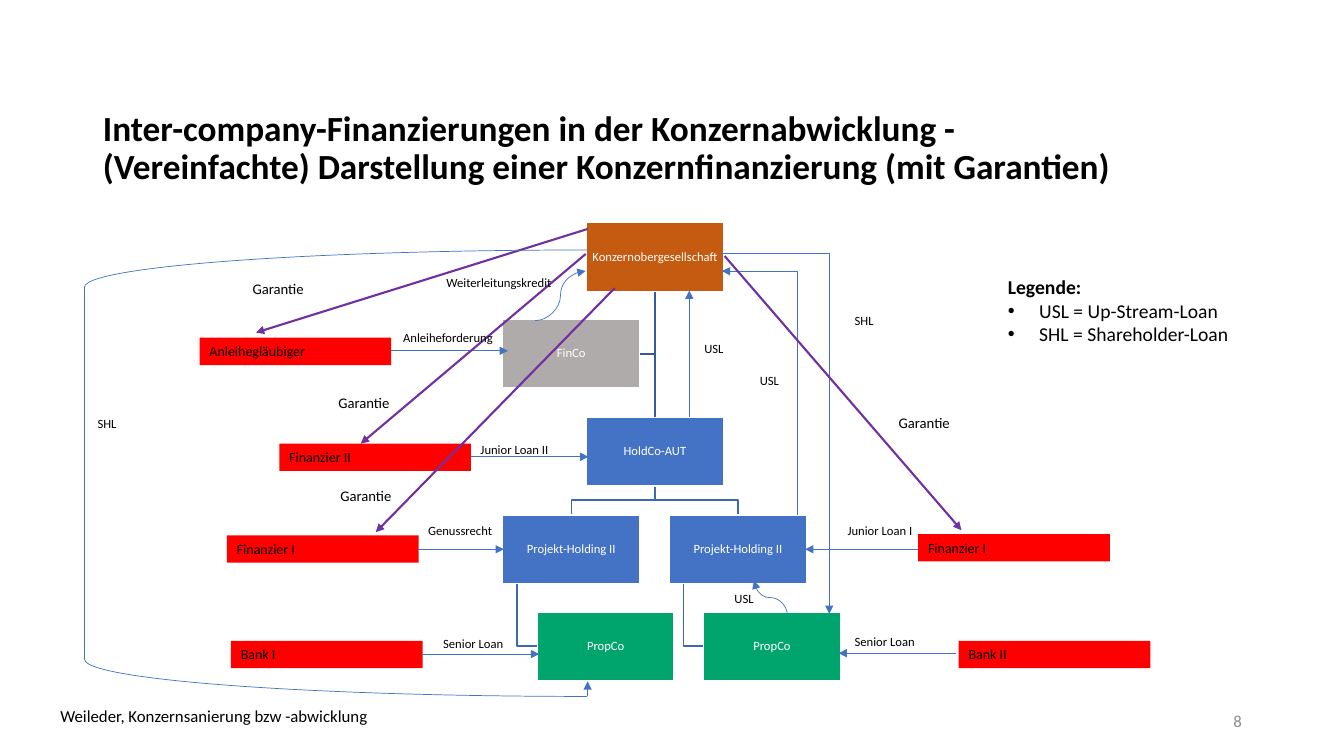
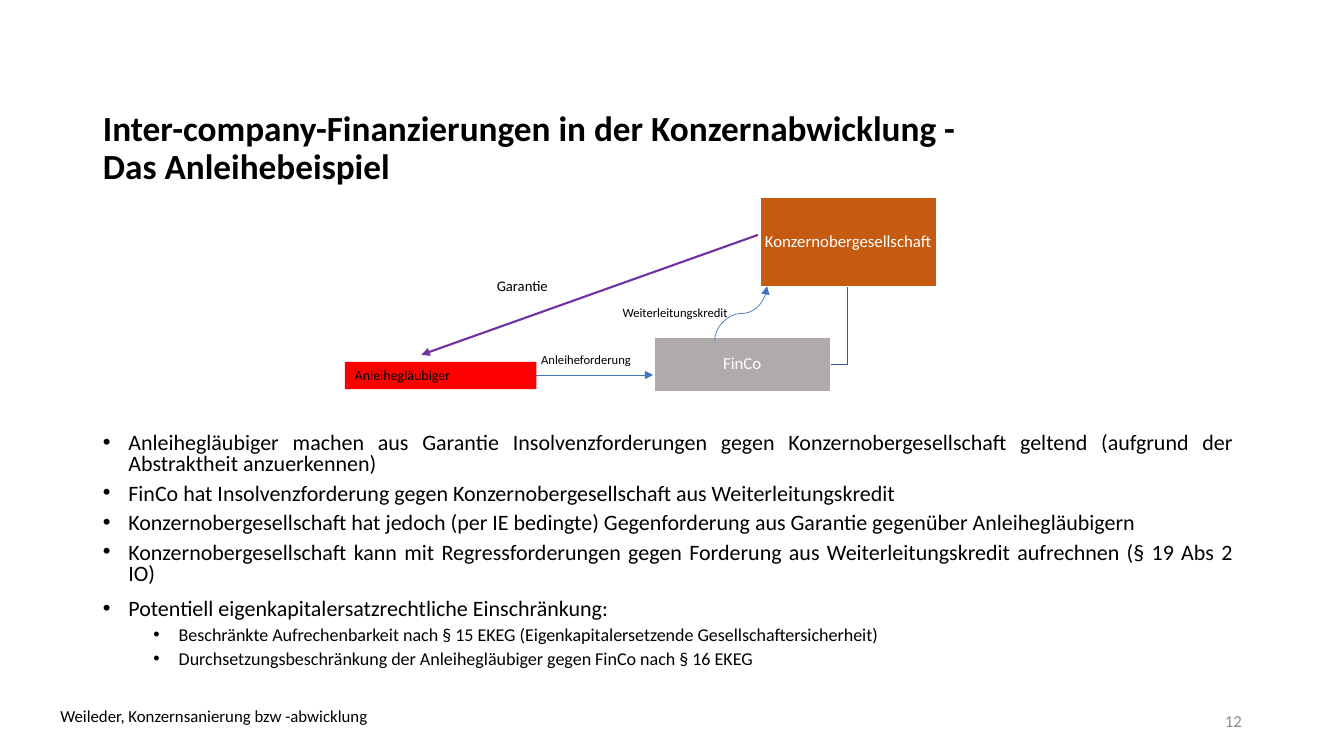
from dataclasses import dataclass

from lxml import etree
from pptx import Presentation
from pptx.dml.color import RGBColor
from pptx.enum.shapes import MSO_CONNECTOR as Link, MSO_SHAPE as Preset
from pptx.enum.text import MSO_ANCHOR as Anchor, MSO_AUTO_SIZE as AutoSize, PP_ALIGN as Align
from pptx.oxml.ns import qn
from pptx.util import Cm, Pt


@dataclass(frozen=True)
class Theme:
    font: str = "Calibri"
    black: str = "000000"
    white: str = "FFFFFF"
    number: str = "8C8C8C"
    parent: str = "C55A11"
    holding: str = "4472C4"
    property: str = "00A56D"
    finance: str = "AFABAB"
    creditor: str = "FF0000"
    guarantee: str = "7030A0"
    upper_tie: str = "365B9D"
    lower_tie: str = "3E67B2"
    title_size: float = 25.2
    body_size: float = 15.7
    sub_size: float = 12.9
    legend_size: float = 14
    footer_size: float = 12
    guarantee_size: float = 10.5
    creditor_size: float = 10
    label_size: float = 9


theme = Theme()


def add_box(slide, place, text, size, color=theme.black, fill=None, align=Align.LEFT, wrap=True):
    """Add a filled rectangle, or a plain text box when there is no fill."""
    place = [Cm(length) for length in place]
    if fill:
        box = slide.shapes.add_shape(Preset.RECTANGLE, *place)
        box.shadow.inherit = False
        box.fill.solid()
        box.fill.fore_color.rgb = RGBColor.from_string(fill)
        box.line.fill.background()
    else:
        box = slide.shapes.add_textbox(*place)
    frame = box.text_frame
    frame.word_wrap = wrap
    frame.vertical_anchor = Anchor.TOP
    frame.text = text
    for para in frame.paragraphs:
        para.alignment = align
        para.font.name = theme.font
        para.font.size = Pt(size)
        para.font.color.rgb = RGBColor.from_string(color)
    return box


def add_link(slide, start, end, kind=Link.STRAIGHT, color=theme.holding, width=0.5,
             arrow=True, upright=False, bend=None):
    """Add a connector; an upright one leaves its start vertically."""
    (x1, y1), (x2, y2) = start, end
    if upright:
        mid_x, mid_y = (x1 + x2) / 2, (y1 + y2) / 2
        x1, y1, x2, y2 = (mid_x - y1 + mid_y, mid_y + x1 - mid_x,
                          mid_x - y2 + mid_y, mid_y + x2 - mid_x)
    link = slide.shapes.add_connector(kind, Cm(x1), Cm(y1), Cm(x2), Cm(y2))
    if upright:
        link.rotation = 270
    link.line.color.rgb = RGBColor.from_string(color)
    link.line.width = Pt(width)
    properties = link.element.spPr
    if arrow:
        etree.SubElement(properties.find(qn("a:ln")), qn("a:tailEnd"), type="triangle")
    if bend is not None:
        geometry = properties.find(qn("a:prstGeom"))
        guides = geometry.find(qn("a:avLst"))
        if guides is None:
            guides = etree.SubElement(geometry, qn("a:avLst"))
        etree.SubElement(guides, qn("a:gd"), name="adj1", fmla=f"val {bend}")
    etree.SubElement(properties, qn("a:effectLst"))


# Content, lengths in centimetres
label_widths = {
    "Weiterleitungskredit": 3.23, "Anleiheforderung": 2.82, "Senior Loan": 2.03,
    "Junior Loan II": 2.24, "Junior Loan I": 2.16, "Genussrecht": 2.21,
    "USL": 1, "SHL": 1, "Garantie": 1.91,
}
creditor_width, creditor_height = 4.83, 0.69

group_chart = dict(
    number="8",
    layout=5,
    subtitle="(Vereinfachte) Darstellung einer Konzernfinanzierung (mit Garantien)",
    company_size=9,
    ties=[
        (theme.upper_tie, [(16.51, 7.34), (16.51, 8.92), (16.13, 8.92)]),
        (theme.lower_tie, [(16.51, 12.24), (16.51, 12.6), (14.4, 12.6), (14.4, 12.98)]),
        (theme.lower_tie, [(16.51, 12.24), (16.51, 12.6), (18.6, 12.6), (18.6, 12.98)]),
        (theme.lower_tie, [(13.03, 14.71), (13.03, 16.28), (13.54, 16.28)]),
        (theme.lower_tie, [(17.22, 14.71), (17.22, 16.28), (17.73, 16.28)]),
    ],
    companies=[(name, color, (left, top, 3.45, 1.73)) for name, color, left, top in [
        ("Konzernobergesellschaft", theme.parent, 14.78, 5.61),
        ("FinCo", theme.finance, 12.67, 8.05),
        ("HoldCo-AUT", theme.holding, 14.78, 10.52),
        ("Projekt-Holding II", theme.holding, 12.67, 12.98),
        ("Projekt-Holding II", theme.holding, 16.87, 12.98),
        ("PropCo", theme.property, 13.54, 15.42),
        ("PropCo", theme.property, 17.73, 15.42),
    ]],
    creditors=[
        ("Anleihegläubiger", 5.03, 8.51), ("Finanzier II", 7.04, 11.18),
        ("Finanzier I", 5.72, 13.49), ("Finanzier I", 23.14, 13.46),
        ("Bank I", 5.82, 16.15), ("Bank II", 24.16, 16.15),
    ],
    loans=[
        ((9.86, 8.84), (12.8, 8.84)), ((11.86, 11.51), (14.83, 11.51)),
        ((10.54, 13.84), (12.7, 13.84)), ((23.14, 13.84), (20.29, 13.84)),
        ((10.64, 16.48), (13.59, 16.48)), ((24.1, 16.46), (21.13, 16.46)),
        ((17.37, 10.52), (17.37, 7.32)), ((14.81, 17.55), (14.81, 17.17)),
    ],
    bends=[
        ((13.49, 8.08), (14.76, 6.83), Link.CURVE, False, None),
        ((19.84, 15.49), (19, 14.63), Link.CURVE, True, None),
        ((18.19, 6.4), (20.9, 15.47), Link.ELBOW, True, -200),
        ((20.09, 12.98), (18.19, 6.83), Link.ELBOW, True, 99900),
    ],
    guarantees=[
        ((14.81, 5.77), (6.45, 8.38)), ((14.76, 6.4), (9.09, 11.18)),
        ((15.49, 7.26), (9.47, 13.41)), ((18.26, 6.45), (24.23, 13.36)),
    ],
    labels=[
        ("Weiterleitungskredit", 11, 6.81), ("Anleiheforderung", 9.91, 8.18),
        ("Junior Loan II", 11.86, 11), ("Genussrecht", 10.54, 13.06),
        ("Junior Loan I", 21.11, 13.06), ("Senior Loan", 10.92, 15.9),
        ("Senior Loan", 21.29, 15.85), ("USL", 17.5, 8.46), ("USL", 18.9, 9.27),
        ("USL", 18.26, 14.76), ("SHL", 21.29, 7.75), ("SHL", 2.21, 10.36),
        ("Garantie", 6.12, 6.93), ("Garantie", 8.28, 9.8),
        ("Garantie", 8.33, 12.14), ("Garantie", 22.4, 10.31),
    ],
)

bond_chart = dict(
    number="12",
    layout=1,
    subtitle="Das Anleihebeispiel",
    company_size=12,
    ties=[(theme.upper_tie, [(21.36, 7.19), (21.36, 9.19), (20.93, 9.19)])],
    companies=[
        ("Konzernobergesellschaft", theme.parent, (19.15, 4.98, 4.45, 2.24)),
        ("FinCo", theme.finance, (16.48, 8.51, 4.45, 1.35)),
    ],
    creditors=[("Anleihegläubiger", 8.69, 9.12)],
    loans=[((13.51, 9.45), (16.46, 9.45))],
    bends=[((18.01, 8.59), (19.33, 7.21), Link.CURVE, True, None)],
    guarantees=[((19.1, 5.92), (10.62, 8.94))],
    labels=[
        ("Weiterleitungskredit", 15.44, 7.57), ("Anleiheforderung", 13.39, 8.74),
        ("Garantie", 12.27, 6.86),
    ],
)

# Body points: text, level, space before
points = [
    ("Anleihegläubiger machen aus Garantie Insolvenzforderungen gegen Konzernobergesellschaft "
     "geltend (aufgrund der Abstraktheit anzuerkennen)", 0, 0),
    ("FinCo hat Insolvenzforderung gegen Konzernobergesellschaft aus Weiterleitungskredit", 0, 6),
    ("Konzernobergesellschaft hat jedoch (per IE bedingte) Gegenforderung aus Garantie "
     "gegenüber Anleihegläubigern", 0, 6),
    ("Konzernobergesellschaft kann mit Regressforderungen gegen Forderung aus "
     "Weiterleitungskredit aufrechnen (§ 19 Abs 2 IO)", 0, 6),
    ("Potentiell eigenkapitalersatzrechtliche Einschränkung:", 0, 10),
    ("Beschränkte Aufrechenbarkeit nach § 15 EKEG "
     "(Eigenkapitalersetzende Gesellschaftersicherheit)", 1, 5),
    ("Durchsetzungsbeschränkung der Anleihegläubiger gegen FinCo nach § 16 EKEG", 1, 5),
]

deck = Presentation()
deck.slide_width, deck.slide_height = Cm(33.87), Cm(19.05)

for chart in (group_chart, bond_chart):
    slide = deck.slides.add_slide(deck.slide_layouts[chart["layout"]])

    # Title and footer
    title = slide.shapes.title
    title.left, title.top, title.width, title.height = Cm(2.34), Cm(2.62), Cm(29.21), Cm(2.29)
    title.text_frame.text = ("Inter-company-Finanzierungen in der Konzernabwicklung -\v"
                             + chart["subtitle"])
    title.text_frame.auto_size = AutoSize.NONE
    title.text_frame.vertical_anchor = Anchor.MIDDLE
    para = title.text_frame.paragraphs[0]
    para.alignment = Align.LEFT
    para.line_spacing = 0.9
    para.font.name = theme.font
    para.font.size = Pt(theme.title_size)
    para.font.bold = True
    para.font.color.rgb = RGBColor.from_string(theme.black)
    number = add_box(slide, (23.93, 17.65, 7.62, 1.02), chart["number"], theme.footer_size,
                     theme.number, align=Align.RIGHT)
    number.text_frame.vertical_anchor = Anchor.MIDDLE
    add_box(slide, (1.27, 17.65, 17.42, 0.76), "Weileder, Konzernsanierung bzw -abwicklung",
            theme.footer_size)

    # Ownership ties
    for color, corners in chart["ties"]:
        corners = [(Cm(x), Cm(y)) for x, y in corners]
        outline = slide.shapes.build_freeform(*corners[0])
        outline.add_line_segments(corners[1:], close=False)
        tie = outline.convert_to_shape()
        tie.shadow.inherit = False
        tie.fill.background()
        tie.line.color.rgb = RGBColor.from_string(color)
        tie.line.width = Pt(1)
    if chart is group_chart:
        add_link(slide, (16.51, 7.34), (16.51, 10.52), color=theme.upper_tie, width=1, arrow=False)

    # Companies and creditors
    for name, color, place in chart["companies"]:
        company = add_box(slide, place, name, chart["company_size"], theme.white, color,
                          Align.CENTER)
        company.line.color.rgb = RGBColor.from_string(theme.white)
        company.line.width = Pt(1)
        frame = company.text_frame
        frame.vertical_anchor = Anchor.MIDDLE
        frame.margin_left = frame.margin_right = frame.margin_top = frame.margin_bottom = Cm(0.03)
        frame.paragraphs[0].line_spacing = 0.9
    for name, left, top in chart["creditors"]:
        add_box(slide, (left, top, creditor_width, creditor_height), name, theme.creditor_size,
                fill=theme.creditor)

    # Loans, guarantees and their labels
    for start, end in chart["loans"]:
        add_link(slide, start, end)
    for start, end, kind, upright, bend in chart["bends"]:
        add_link(slide, start, end, kind, upright=upright, bend=bend)
    for start, end in chart["guarantees"]:
        add_link(slide, start, end, color=theme.guarantee, width=1.5)
    for text, left, top in chart["labels"]:
        size = theme.guarantee_size if text == "Garantie" else theme.label_size
        add_box(slide, (left, top, label_widths[text], 0.64), text, size, wrap=False)

group_slide, bond_slide = deck.slides

# Shareholder loan around the left side
bracket = group_slide.shapes.add_shape(Preset.LEFT_BRACKET, Cm(2.13), Cm(6.3), Cm(12.67), Cm(11.25))
bracket.shadow.inherit = False
bracket.fill.background()
bracket.line.color.rgb = RGBColor.from_string(theme.holding)
bracket.line.width = Pt(0.5)

# Legend and body text
legend = add_box(group_slide, (25.15, 6.81, 6.15, 2.06),
                 "Legende:\nUSL = Up-Stream-Loan\nSHL = Shareholder-Loan",
                 theme.legend_size, wrap=False)
legend.text_frame.paragraphs[0].font.bold = True
body = bond_slide.placeholders[1]
body.left, body.top, body.width, body.height = Cm(2.34), Cm(10.8), Cm(29.01), Cm(6.35)
body.text_frame.text = "\n".join(text for text, level, space in points)
body.text_frame.auto_size = AutoSize.NONE

# Bullets
bulleted = [(para, 0.79, 0.79) for para in legend.text_frame.paragraphs[1:]]
for para, (text, level, space) in zip(body.text_frame.paragraphs, points):
    para.level = level
    bulleted.append((para, 1.91 if level else 0.64, 0.64))
for para, indent, hanging in bulleted:
    properties = para._p.get_or_add_pPr()
    properties.set("marL", str(Cm(indent)))
    properties.set("indent", str(-Cm(hanging)))
    for position, (tag, name, value) in enumerate([("a:buFont", "typeface", "Arial"),
                                                   ("a:buChar", "char", "•")]):
        mark = etree.Element(qn(tag))
        mark.set(name, value)
        properties.insert(position, mark)

for para, (text, level, space) in zip(body.text_frame.paragraphs, points):
    para.alignment = Align.JUSTIFY
    para.line_spacing = 0.8
    para.space_before = Pt(space)
    para.font.name = theme.font
    para.font.size = Pt(theme.sub_size if level else theme.body_size)
    para.font.color.rgb = RGBColor.from_string(theme.black)

deck.save("out.pptx")
